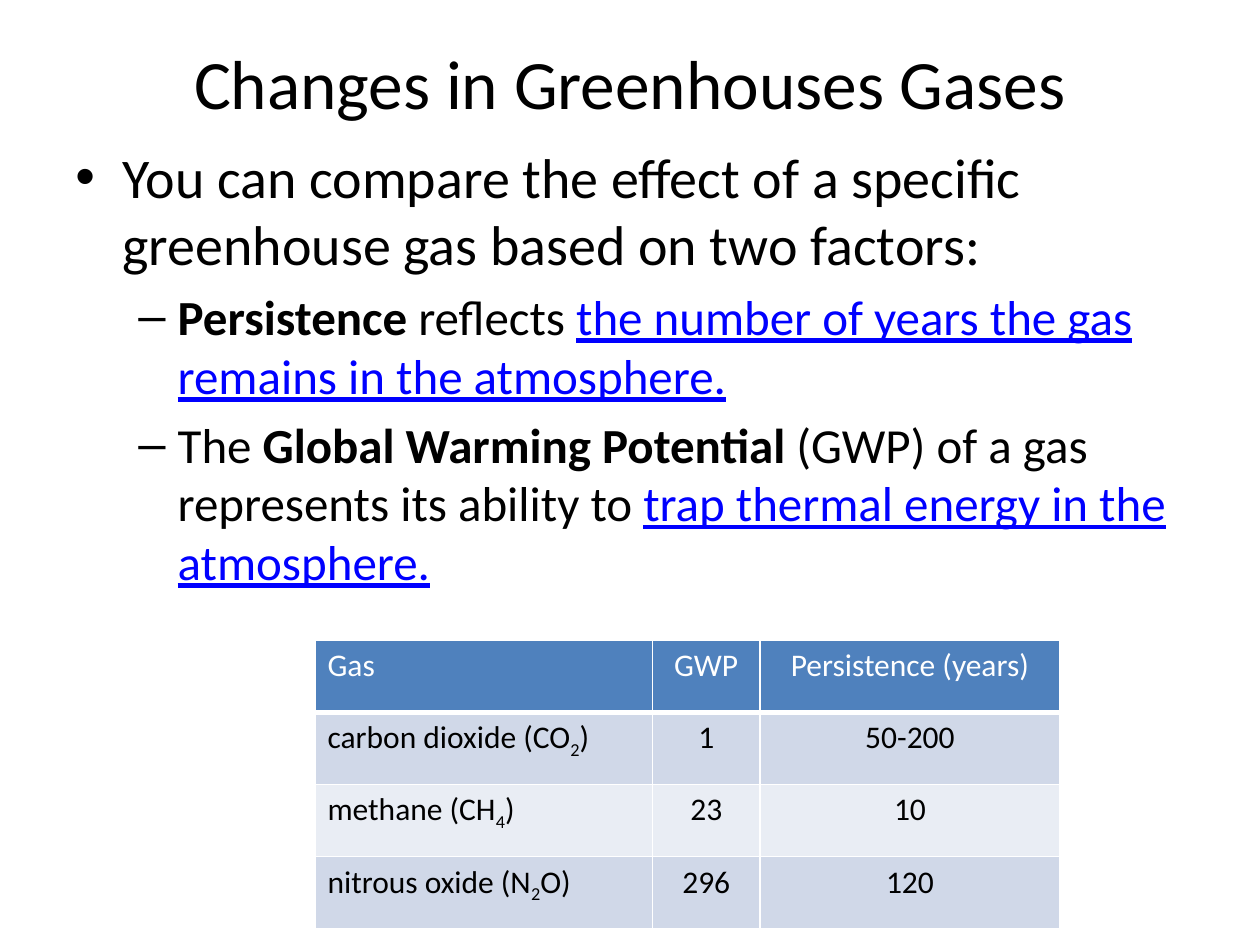
from lxml import etree
from pptx import Presentation
from pptx.dml.color import RGBColor
from pptx.enum.text import MSO_ANCHOR, PP_ALIGN
from pptx.oxml.ns import qn
from pptx.util import Pt

CENTER, LEFT = PP_ALIGN.CENTER, PP_ALIGN.LEFT
TOP, MIDDLE = MSO_ANCHOR.TOP, MSO_ANCHOR.MIDDLE
BLACK = RGBColor(0x00, 0x00, 0x00)
WHITE = RGBColor(0xFF, 0xFF, 0xFF)
BLUE = RGBColor(0x00, 0x00, 0xFF)
HEADER_FILL = RGBColor(0x4F, 0x81, 0xBD)
BAND_FILLS = (RGBColor(0xD0, 0xD8, 0xE8), RGBColor(0xE9, 0xED, 0xF4))

PLAIN = {}
BOLD = {"bold": True}
ANSWER = {"underline": True, "color": BLUE}
SUBSCRIPT = {"baseline": -25000}

TITLE = "Changes in Greenhouses Gases"
BODY = [
    (0, [("You can compare the effect of a specific greenhouse gas based on two factors:", PLAIN)]),
    (1, [("Persistence", BOLD), (" reflects ", PLAIN),
         ("the number of years the gas remains in the atmosphere.", ANSWER)]),
    (1, [("The ", PLAIN), ("Global Warming Potential", BOLD),
         (" (GWP) of a gas represents its ability to ", PLAIN),
         ("trap thermal energy in the atmosphere.", ANSWER)]),
]
LEVELS = [
    {"size": 32, "margin": 27, "hanging": 27, "bullet": "•"},
    {"size": 28, "margin": 58.5, "hanging": 22.5, "bullet": "–"},
]
GASES = [
    ([("Gas", PLAIN)], "GWP", "Persistence (years)"),
    ([("carbon dioxide (CO", PLAIN), ("2", SUBSCRIPT), (")", PLAIN)], "1", "50-200"),
    ([("methane (CH", PLAIN), ("4", SUBSCRIPT), (")", PLAIN)], "23", "10"),
    ([("nitrous oxide (N", PLAIN), ("2", SUBSCRIPT), ("O)", PLAIN)], "296", "120"),
]
COLUMN_WIDTHS = (193, 61.2, 171.6)
ROW_HEIGHT = 41.2


def add_runs(paragraph, runs, size, color):
    for text, changes in runs:
        formats = {"name": "Calibri", "size": Pt(size), "bold": False, "color": color, **changes}
        run = paragraph.add_run()
        run.text = text
        run.font.color.rgb = formats.pop("color")
        baseline = formats.pop("baseline", None)
        for name, value in formats.items():
            setattr(run.font, name, value)
        if baseline:
            run.font._element.set("baseline", str(baseline))


def add_text_frame(slide, left, top, width, height, anchor):
    box = slide.shapes.add_textbox(Pt(left), Pt(top), Pt(width), Pt(height))
    box.text_frame.word_wrap = True
    box.text_frame.vertical_anchor = anchor
    return box.text_frame


def set_bullet(paragraph, level):
    properties = paragraph._p.get_or_add_pPr()
    properties.set("marL", str(Pt(level["margin"])))
    properties.set("indent", str(-Pt(level["hanging"])))
    etree.SubElement(properties, qn("a:buFont"), typeface="Arial")
    etree.SubElement(properties, qn("a:buChar"), char=level["bullet"])


def set_borders(cell, bottom_width):
    properties = cell._tc.get_or_add_tcPr()
    for side, width in (("L", 1), ("R", 1), ("T", 1), ("B", bottom_width)):
        line = etree.SubElement(properties, qn(f"a:ln{side}"), w=str(Pt(width)))
        fill = etree.SubElement(line, qn("a:solidFill"))
        etree.SubElement(fill, qn("a:srgbClr"), val=str(WHITE))


def add_body(slide):
    frame = add_text_frame(slide, 36, 77.8, 648, 414, TOP)
    for index, (depth, runs) in enumerate(BODY):
        level = LEVELS[depth]
        paragraph = frame.add_paragraph() if index else frame.paragraphs[0]
        paragraph.level = depth
        paragraph.space_before = Pt(level["size"] * 0.2)
        set_bullet(paragraph, level)
        add_runs(paragraph, runs, level["size"], BLACK)


def add_gas_table(slide):
    table = slide.shapes.add_table(
        len(GASES), len(COLUMN_WIDTHS), Pt(180), Pt(366),
        Pt(sum(COLUMN_WIDTHS)), Pt(ROW_HEIGHT * len(GASES))).table
    for column, width in zip(table.columns, COLUMN_WIDTHS):
        column.width = Pt(width)
    for row_index, (gas, *values) in enumerate(GASES):
        table.rows[row_index].height = Pt(ROW_HEIGHT)
        is_header = row_index == 0
        row_fill = HEADER_FILL if is_header else BAND_FILLS[(row_index - 1) % 2]
        row_runs = [gas] + [[(value, PLAIN)] for value in values]
        for column_index, runs in enumerate(row_runs):
            cell = table.cell(row_index, column_index)
            set_borders(cell, 3 if is_header else 1)
            cell.fill.solid()
            cell.fill.fore_color.rgb = row_fill
            paragraph = cell.text_frame.paragraphs[0]
            paragraph.alignment = CENTER if column_index else LEFT
            add_runs(paragraph, runs, 18, WHITE if is_header else BLACK)


def main():
    presentation = Presentation()
    presentation.slide_width, presentation.slide_height = Pt(720), Pt(540)
    slide = presentation.slides.add_slide(presentation.slide_layouts[6])
    title = add_text_frame(slide, 36, 21.6, 648, 50.4, MIDDLE).paragraphs[0]
    title.alignment = CENTER
    add_runs(title, [(TITLE, PLAIN)], 39.6, BLACK)
    add_body(slide)
    add_gas_table(slide)
    presentation.save("out.pptx")


if __name__ == "__main__":
    main()
